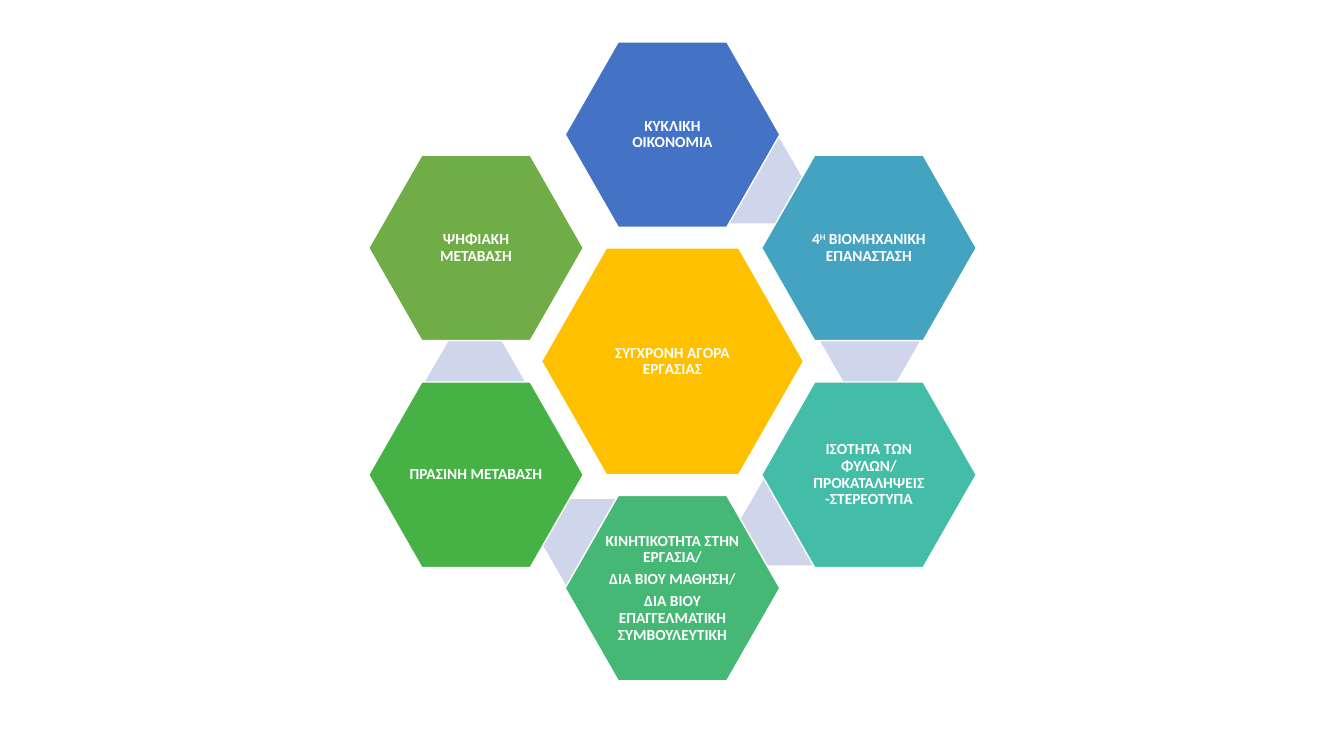
from dataclasses import dataclass
from math import cos, radians, sin

from pptx import Presentation
from pptx.dml.color import RGBColor
from pptx.enum.shapes import MSO_SHAPE
from pptx.enum.text import MSO_ANCHOR, PP_ALIGN
from pptx.shapes.autoshape import Shape
from pptx.slide import Slide
from pptx.util import Inches, Length, Pt


@dataclass(frozen=True)
class Theme:
    font: str = "Calibri"
    size: float = 11
    text: str = "FFFFFF"
    outline: str = "FFFFFF"
    link: str = "CFD5EA"
    core: str = "FFC000"


@dataclass(frozen=True)
class HexSize:
    """Width and height as percent of the slide height."""
    width: float
    height: float
    adjust: float


@dataclass(frozen=True)
class Topic:
    """Lines of text, with superscripts between carets, and a fill colour."""
    lines: tuple[str, ...]
    fill: str


THEME = Theme()
SLIDE_W, SLIDE_H = Inches(13.33), Inches(7.5)

# Percent of the slide width (X) or height (all others)
CENTER_X, CENTER_Y = 50.04, 47.8
TOPIC_RADIUS, LINK_RADIUS = 30, 26.25
CORE_SIZE = HexSize(34.67, 30, 0.286)
TOPIC_SIZE = HexSize(28.4, 24.53, 0.286)
LINK_SIZE = HexSize(13.07, 11.33, 0.289)

STEP = 60           # degrees between neighbouring topics
LINK_OFFSET = 24.4  # degrees from a topic to its link

CORE = Topic(("ΣΥΓΧΡΟΝΗ ΑΓΟΡΑ ΕΡΓΑΣΙΑΣ",), THEME.core)
RING = (
    Topic(("ΚΥΚΛΙΚΗ ΟΙΚΟΝΟΜΙΑ",), "4472C4"),
    Topic(("4^Η^ ΒΙΟΜΗΧΑΝΙΚΗ ΕΠΑΝΑΣΤΑΣΗ",), "44A3C0"),
    Topic(("ΙΣΟΤΗΤΑ ΤΩΝ ΦΥΛΩΝ/ ΠΡΟΚΑΤΑΛΗΨΕΙΣ -ΣΤΕΡΕΟΤΥΠΑ",), "43BDA7"),
    Topic(("ΚΙΝΗΤΙΚΟΤΗΤΑ ΣΤΗΝ ΕΡΓΑΣΙΑ/", "ΔΙΑ ΒΙΟΥ ΜΑΘΗΣΗ/",
           "ΔΙΑ ΒΙΟΥ ΕΠΑΓΓΕΛΜΑΤΙΚΗ ΣΥΜΒΟΥΛΕΥΤΙΚΗ"), "44B874"),
    Topic(("ΠΡΑΣΙΝΗ ΜΕΤΑΒΑΣΗ",), "46B246"),
    Topic(("ΨΗΦΙΑΚΗ ΜΕΤΑΒΑΣΗ",), "70AD47"),
)


def share(percent: float, whole: Length = SLIDE_H) -> Length:
    return Length(round(whole * percent / 100))


def add_hexagon(s: Slide, size: HexSize, fill: str,
                radius: float = 0, angle: float = 0) -> Shape:
    """Center a hexagon at a clockwise angle from the top of the ring."""
    width, height = share(size.width), share(size.height)
    x = share(CENTER_X, SLIDE_W) + share(radius * sin(radians(angle)))
    y = share(CENTER_Y) - share(radius * cos(radians(angle)))
    sp = s.shapes.add_shape(MSO_SHAPE.HEXAGON, x - width // 2,
                            y - height // 2, width, height)
    sp.adjustments[0] = size.adjust
    sp.shadow.inherit = False
    sp.fill.solid()
    sp.fill.fore_color.rgb = RGBColor.from_string(fill)
    sp.line.fill.background()
    return sp


def add_topic(s: Slide, topic: Topic, size: HexSize,
              radius: float = 0, angle: float = 0) -> None:
    sp = add_hexagon(s, size, topic.fill, radius, angle)
    sp.line.color.rgb = RGBColor.from_string(THEME.outline)
    sp.line.width = Pt(1)
    tf = sp.text_frame
    tf.word_wrap = True
    tf.vertical_anchor = MSO_ANCHOR.MIDDLE
    tf.margin_left = tf.margin_right = Inches(0.02)
    tf.margin_top = tf.margin_bottom = Inches(0.02)
    tf.text = "\n".join(topic.lines)
    for p, line in zip(tf.paragraphs, topic.lines):
        p.alignment = PP_ALIGN.CENTER
        p.line_spacing = 0.9
        p.space_after = Pt(0.35 * THEME.size)
        p.text = ""
        for i, part in enumerate(line.split("^")):
            r = p.add_run()
            r.text = part
            r.font.name = THEME.font
            r.font.size = Pt(THEME.size)
            r.font.bold = True
            r.font.color.rgb = RGBColor.from_string(THEME.text)
            if i % 2:
                r._r.get_or_add_rPr().set("baseline", "30000")


def main() -> None:
    prs = Presentation()
    prs.slide_width, prs.slide_height = SLIDE_W, SLIDE_H
    s = prs.slides.add_slide(prs.slide_layouts[6])
    add_topic(s, CORE, CORE_SIZE)
    for i, topic in enumerate(RING):
        angle = i * STEP
        if i < len(RING) - 1:
            add_hexagon(s, LINK_SIZE, THEME.link, LINK_RADIUS,
                        angle + LINK_OFFSET)
        add_topic(s, topic, TOPIC_SIZE, TOPIC_RADIUS, angle)
    prs.save("out.pptx")


if __name__ == "__main__":
    main()
